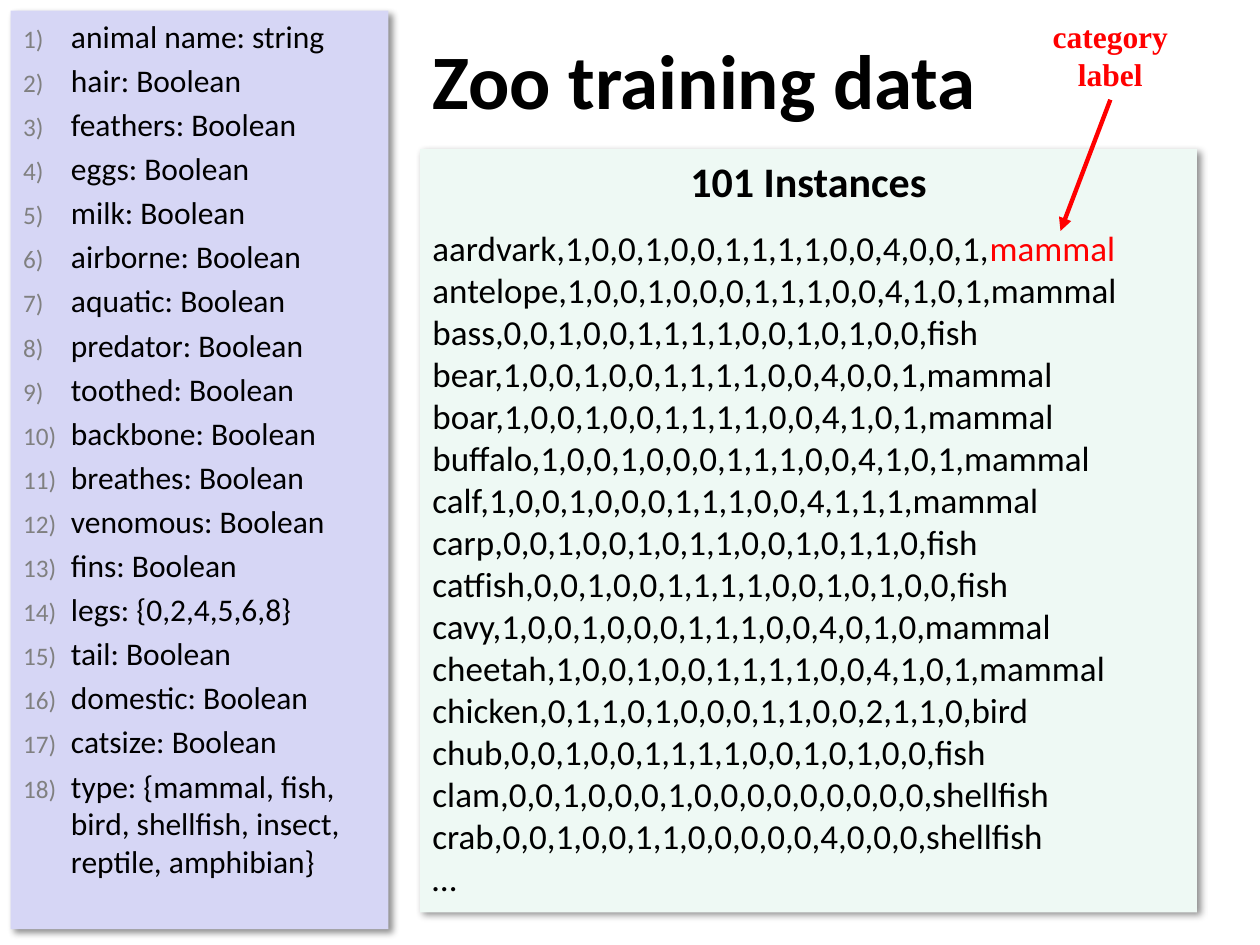
import dataclasses
import typing

import lxml.etree
import pptx
import pptx.dml.color
import pptx.enum.dml
import pptx.enum.shapes
import pptx.enum.text
import pptx.oxml
import pptx.oxml.ns
import pptx.util

CELL = pptx.util.Inches(1) / 12  # the slide is a grid of 120 columns and 90 rows
Alignment = pptx.enum.text.PP_ALIGN
qn = pptx.oxml.ns.qn


@dataclasses.dataclass(frozen=True)
class Theme:
    font: str = "Calibri"
    label_font: str = "Times New Roman"
    ink: str = "000000"
    accent: str = "FF0000"
    number: str = "808080"
    attribute_fill: str = "D6D6F5"
    instance_fill: str = "EEF9F4"
    title_size: float = 44
    heading_size: float = 24
    instance_size: float = 20
    attribute_size: float = 18


class Box(typing.NamedTuple):
    column: float
    row: float
    columns: float
    rows: float


THEME = Theme()
TITLE_BOX = Box(40, 0, 79.5, 15)
ATTRIBUTE_BOX = Box(1, 1, 36, 87.5)
INSTANCE_BOX = Box(40, 14.2, 74, 72.7)
LABEL_BOX = Box(99, 1, 13.5, 8.5)
ARROW_TIP = (101, 22)

ATTRIBUTES = [
    "animal name: string",
    *(f"{name}: Boolean" for name in (
        "hair", "feathers", "eggs", "milk", "airborne", "aquatic", "predator",
        "toothed", "backbone", "breathes", "venomous", "fins")),
    "legs: {0,2,4,5,6,8}",
    *(f"{name}: Boolean" for name in ("tail", "domestic", "catsize")),
    "type: {mammal, fish, bird, shellfish, insect, reptile, amphibian}",
]
FIRST_INSTANCE = ("aardvark,1,0,0,1,0,0,1,1,1,1,0,0,4,0,0,1,", "mammal")
OTHER_INSTANCES = [
    "antelope,1,0,0,1,0,0,0,1,1,1,0,0,4,1,0,1,mammal",
    "bass,0,0,1,0,0,1,1,1,1,0,0,1,0,1,0,0,fish",
    "bear,1,0,0,1,0,0,1,1,1,1,0,0,4,0,0,1,mammal",
    "boar,1,0,0,1,0,0,1,1,1,1,0,0,4,1,0,1,mammal",
    "buffalo,1,0,0,1,0,0,0,1,1,1,0,0,4,1,0,1,mammal",
    "calf,1,0,0,1,0,0,0,1,1,1,0,0,4,1,1,1,mammal",
    "carp,0,0,1,0,0,1,0,1,1,0,0,1,0,1,1,0,fish",
    "catfish,0,0,1,0,0,1,1,1,1,0,0,1,0,1,0,0,fish",
    "cavy,1,0,0,1,0,0,0,1,1,1,0,0,4,0,1,0,mammal",
    "cheetah,1,0,0,1,0,0,1,1,1,1,0,0,4,1,0,1,mammal",
    "chicken,0,1,1,0,1,0,0,0,1,1,0,0,2,1,1,0,bird",
    "chub,0,0,1,0,0,1,1,1,1,0,0,1,0,1,0,0,fish",
    "clam,0,0,1,0,0,0,1,0,0,0,0,0,0,0,0,0,shellfish",
    "crab,0,0,1,0,0,1,1,0,0,0,0,0,4,0,0,0,shellfish",
    "…",
]


def rgb(color: str) -> pptx.dml.color.RGBColor:
    return pptx.dml.color.RGBColor.from_string(color)


def emu(box: typing.Iterable[float]) -> list[int]:
    """Turn grid units into slide lengths."""
    return [round(units * CELL) for units in box]


def place(shape, box: Box) -> None:
    shape.left, shape.top, shape.width, shape.height = emu(box)


def style(paragraph, size: float, bold: bool = False, color: str = THEME.ink,
          font: str = THEME.font, alignment=Alignment.LEFT) -> None:
    paragraph.alignment = alignment
    paragraph.font.name = font
    paragraph.font.size = pptx.util.Pt(size)
    paragraph.font.bold = bold
    paragraph.font.color.rgb = rgb(color)


def make_panel(shape, fill: str) -> None:
    """Give a shape a plain fill and a soft shadow to the lower right."""
    shape.fill.solid()
    shape.fill.fore_color.rgb = rgb(fill)
    shape.line.fill.background()
    shape.shadow.inherit = False
    effects = shape._element.spPr.find(qn("a:effectLst"))
    shadow = lxml.etree.SubElement(
        effects, qn("a:outerShdw"), blurRad=str(pptx.util.Pt(4)),
        dist=str(pptx.util.Pt(3)), dir=str(45 * 60000), algn="tl", rotWithShape="0")
    color = lxml.etree.SubElement(shadow, qn("a:srgbClr"), val=THEME.ink)
    lxml.etree.SubElement(color, qn("a:alpha"), val="43000")


def number_paragraph(paragraph) -> None:
    properties = paragraph._p.get_or_add_pPr()
    indent = pptx.util.Inches(0.38)
    properties.set("marL", str(indent))
    properties.set("indent", str(-indent))
    color = lxml.etree.SubElement(properties, qn("a:buClr"))
    lxml.etree.SubElement(color, qn("a:srgbClr"), val=THEME.number)
    lxml.etree.SubElement(properties, qn("a:buSzPct"), val="80000")
    lxml.etree.SubElement(properties, qn("a:buFont"), typeface=THEME.font)
    lxml.etree.SubElement(properties, qn("a:buAutoNum"), type="arabicParenR")


def fill_title(title) -> None:
    place(title, TITLE_BOX)
    title.text_frame.text = "Zoo training data"
    title.text_frame.vertical_anchor = pptx.enum.text.MSO_ANCHOR.MIDDLE
    style(title.text_frame.paragraphs[0], THEME.title_size, bold=True)


def fill_attributes(body) -> None:
    place(body, ATTRIBUTE_BOX)
    make_panel(body, THEME.attribute_fill)
    frame = body.text_frame
    frame.text = "\n".join(ATTRIBUTES)
    frame.auto_size = pptx.enum.text.MSO_AUTO_SIZE.NONE
    for index, paragraph in enumerate(frame.paragraphs):
        number_paragraph(paragraph)
        paragraph.space_before = pptx.util.Pt(0.2 * THEME.attribute_size if index else 0)
        style(paragraph, THEME.attribute_size)


def add_instances(slide) -> None:
    panel = slide.shapes.add_shape(
        pptx.enum.shapes.MSO_SHAPE.RECTANGLE, *emu(INSTANCE_BOX))
    make_panel(panel, THEME.instance_fill)
    frame = panel.text_frame
    frame.word_wrap = True
    frame.vertical_anchor = pptx.enum.text.MSO_ANCHOR.TOP
    frame.text = "\n".join(["101 Instances", FIRST_INSTANCE[0], *OTHER_INSTANCES])
    heading, *rows = frame.paragraphs
    style(heading, THEME.heading_size, bold=True, alignment=Alignment.CENTER)
    heading.space_after = pptx.util.Pt(12)
    for row in rows:
        style(row, THEME.instance_size)
    category = rows[0].add_run()
    category.text = FIRST_INSTANCE[1]
    category.font.color.rgb = rgb(THEME.accent)


def add_category_label(slide):
    label = slide.shapes.add_textbox(*emu(LABEL_BOX))
    label.text_frame.word_wrap = False
    paragraph = label.text_frame.paragraphs[0]
    paragraph.text = "category\vlabel"
    style(paragraph, THEME.attribute_size, bold=True, color=THEME.accent,
          font=THEME.label_font, alignment=Alignment.CENTER)
    return label


def add_arrow(slide, label) -> None:
    """Point from the bottom of the label to the category it explains."""
    tip = emu(ARROW_TIP)
    arrow = slide.shapes.add_connector(
        pptx.enum.shapes.MSO_CONNECTOR.STRAIGHT, *tip, *tip)
    arrow.begin_connect(label, 2)
    arrow.line.color.rgb = rgb(THEME.accent)
    arrow.line.width = pptx.util.Pt(2.5)
    lxml.etree.SubElement(arrow.line._get_or_add_ln(), qn("a:tailEnd"), type="triangle")
    lxml.etree.SubElement(arrow._element.spPr, qn("a:effectLst"))


def main() -> None:
    presentation = pptx.Presentation()
    presentation.slide_width = pptx.util.Inches(10)
    presentation.slide_height = pptx.util.Inches(7.5)
    slide = presentation.slides.add_slide(presentation.slide_layouts[1])
    fill_title(slide.shapes.title)
    fill_attributes(slide.placeholders[1])
    add_instances(slide)
    add_arrow(slide, add_category_label(slide))
    presentation.save("out.pptx")


if __name__ == "__main__":
    main()
